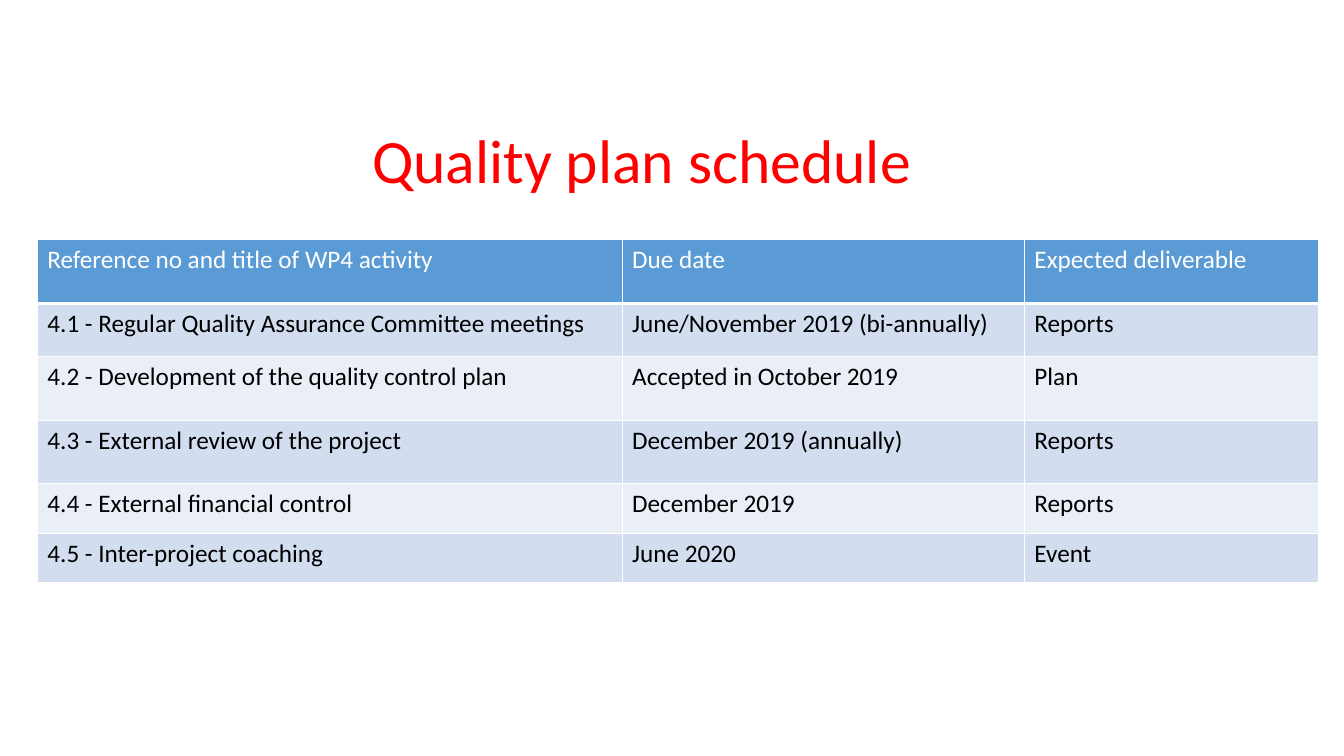
from dataclasses import dataclass

from lxml import etree
from pptx import Presentation
from pptx.dml.color import RGBColor
from pptx.enum.text import MSO_ANCHOR, PP_ALIGN
from pptx.oxml.ns import qn
from pptx.util import Inches, Pt

LEFT = PP_ALIGN.LEFT
MIDDLE = MSO_ANCHOR.MIDDLE
TITLE_ONLY = 5


@dataclass(frozen=True)
class Theme:
    font: str = "Calibri"
    title_size: int = 44
    table_size: int = 18
    title: str = "FF0000"
    header: str = "5B9BD5"
    header_text: str = "FFFFFF"
    body_text: str = "000000"
    bands: tuple = ("D2DEEF", "EAEFF7")
    border: str = "FFFFFF"
    border_width: int = 1
    header_rule: int = 3


class SlideBuilder:
    def __init__(self, prs, theme):
        self.theme = theme
        self.s = prs.slides.add_slide(prs.slide_layouts[TITLE_ONLY])

    def add_text(self, tf, text, size, color):
        p = tf.paragraphs[0]
        p.alignment = LEFT
        r = p.add_run()
        r.text = text
        style = {"name": self.theme.font, "size": Pt(size), "bold": False}
        for name, value in style.items():
            setattr(r.font, name, value)
        r.font.color.rgb = RGBColor.from_string(color)
        return p

    def title(self, text, left, top, width, height):
        sp = self.s.shapes.title
        box = {"left": left, "top": top, "width": width, "height": height}
        for name, value in box.items():
            setattr(sp, name, Inches(value))
        tf = sp.text_frame
        tf.vertical_anchor = MIDDLE
        p = self.add_text(tf, text, self.theme.title_size, self.theme.title)
        p.line_spacing = 0.9

    def borders(self, cell, bottom):
        tc_pr = cell._tc.get_or_add_tcPr()
        thin = self.theme.border_width
        for side, width in (("L", thin), ("R", thin), ("T", thin), ("B", bottom)):
            ln = etree.SubElement(tc_pr, qn(f"a:ln{side}"), w=str(Pt(width)))
            fill = etree.SubElement(ln, qn("a:solidFill"))
            etree.SubElement(fill, qn("a:srgbClr"), val=self.theme.border)

    def table(self, rows, left, top, widths, heights):
        th = self.theme
        frame = self.s.shapes.add_table(
            len(rows), len(widths), Inches(left), Inches(top),
            Inches(sum(widths)), Inches(sum(heights)))
        table = frame.table
        for column, width in zip(table.columns, widths):
            column.width = Inches(width)
        for i, (texts, height) in enumerate(zip(rows, heights)):
            table.rows[i].height = Inches(height)
            if i == 0:
                fill, color, bottom = th.header, th.header_text, th.header_rule
            else:
                fill, color, bottom = th.bands[(i - 1) % 2], th.body_text, th.border_width
            for j, text in enumerate(texts):
                cell = table.cell(i, j)
                self.borders(cell, bottom)
                cell.fill.solid()
                cell.fill.fore_color.rgb = RGBColor.from_string(fill)
                self.add_text(cell.text_frame, text, th.table_size, color)


SCHEDULE = [
    ("Reference no and title of WP4 activity", "Due date", "Expected deliverable"),
    ("4.1 - Regular Quality Assurance Committee meetings",
     "June/November 2019 (bi-annually)", "Reports"),
    ("4.2 - Development of the quality control plan", "Accepted in October 2019", "Plan"),
    ("4.3 - External review of the project", "December 2019 (annually)", "Reports"),
    ("4.4 - External financial control", "December 2019", "Reports"),
    ("4.5 - Inter-project coaching", "June 2020", "Event"),
]


def main():
    prs = Presentation()
    prs.slide_width = Inches(13.33)
    prs.slide_height = Inches(7.5)
    slide = SlideBuilder(prs, Theme())

    # Heading
    slide.title("Quality plan schedule", 3.59, 1.2, 6.1, 0.84)

    # Schedule of activities
    slide.table(SCHEDULE, 0.37, 2.38, widths=(5.8, 3.99, 2.92),
                heights=(0.63, 0.53, 0.63, 0.63, 0.49, 0.49))

    prs.save("out.pptx")


if __name__ == "__main__":
    main()
